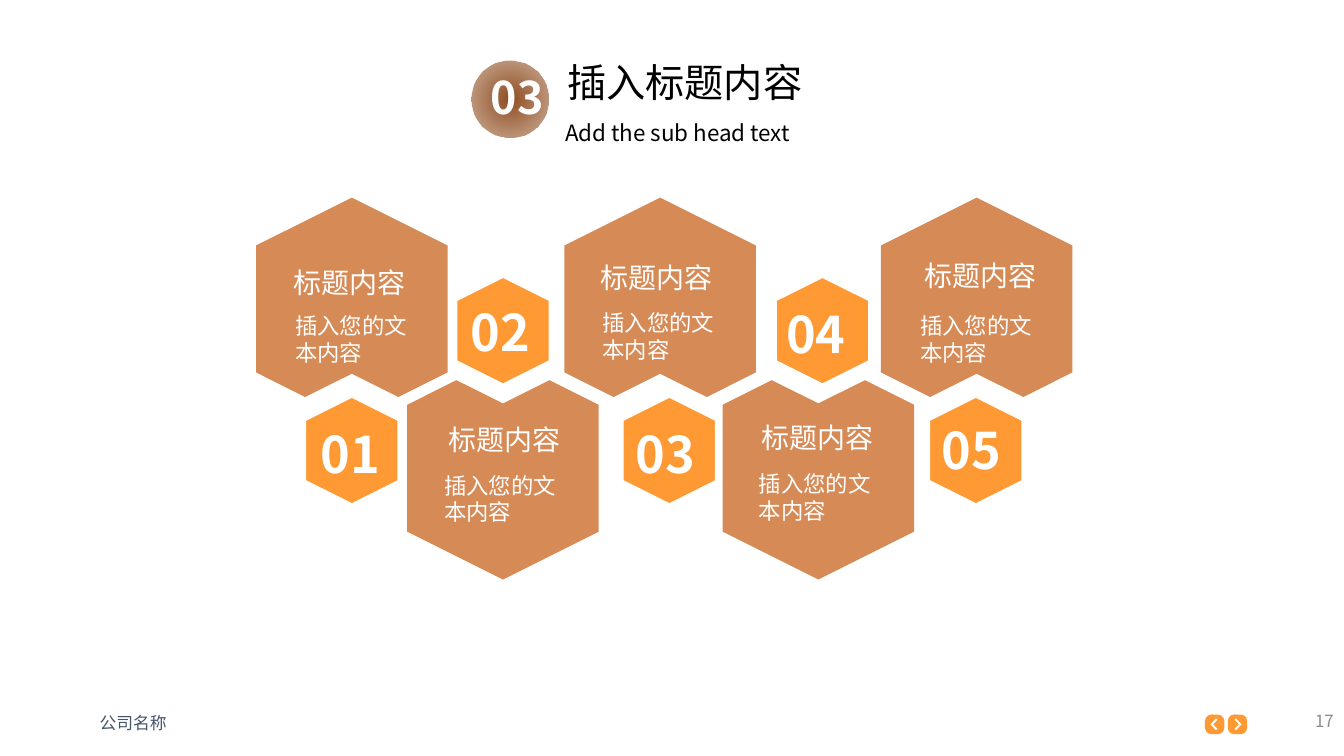
from lxml import etree
from pptx import Presentation
from pptx import util as u
from pptx.dml.color import RGBColor
from pptx.enum import shapes, text
from pptx.oxml import parse_xml
from pptx.oxml.ns import nsdecls, qn

Pt = u.Pt
COLORS = {
    "tile": "C55A11", "badge": "FF9933", "medal": "843C0B", "white": "FFFFFF",
    "black": "000000", "footer": "44546A", "number": "8C8C8C",
}
CJK = "Noto Sans CJK SC"

# Outlines in points, relative to the tile's apex and to the button's centre
TILE = [(0, 0), (68.4, 34.2), (68.4, 124.8), (33.3, 142.4), (0, 125.8),
        (-33.3, 142.4), (-68.4, 124.8), (-68.4, 34.2)]
CHEVRON = [(-2.9, 0), (1, -4.2), (2, -3.2), (-1.2, 0), (2, 3.2), (1, 4.2)]


class Deck:
    def __init__(self, prs):
        self.s = prs.slides.add_slide(prs.slide_layouts[6])

    def paint(self, sp, color, line=None, alpha=None):
        sp.shadow.inherit = False
        sp.fill.solid()
        sp.fill.fore_color.rgb = RGBColor.from_string(COLORS[color])
        if alpha:
            clr = sp.fill._xPr.find(".//" + qn("a:srgbClr"))
            etree.SubElement(clr, qn("a:alpha"), val=str(alpha * 1000))
        if line:
            sp.line.color.rgb = RGBColor.from_string(COLORS[line])
            sp.line.width = Pt(1)
        else:
            sp.line.fill.background()
        return sp

    def preset(self, kind, cx, cy, w, h, color, line=None):
        """Add a preset shape centred on (cx, cy)."""
        sp = self.s.shapes.add_shape(
            kind, Pt(cx - w / 2), Pt(cy - h / 2), Pt(w), Pt(h))
        return self.paint(sp, color, line)

    def outline(self, points, x, y, color, flip_x=1, flip_y=1, alpha=None):
        """Add a closed polygon whose origin is (x, y), mirrored by a flip of -1."""
        pts = [(Pt(x + flip_x * dx), Pt(y + flip_y * dy)) for dx, dy in points]
        builder = self.s.shapes.build_freeform(*pts[0], scale=1.0)
        builder.add_line_segments(pts[1:], close=True)
        return self.paint(builder.convert_to_shape(), color, alpha=alpha)

    def medal(self, cx, cy, size):
        """Add a circle that fades from its centre to its rim."""
        sp = self.preset(shapes.MSO_SHAPE.OVAL, cx, cy, size, size, "medal")
        stops = "".join(
            f'<a:gs pos="{pos}"><a:srgbClr val="{COLORS["medal"]}">'
            f'<a:alpha val="{alpha}"/></a:srgbClr></a:gs>'
            for pos, alpha in ((0, 91000), (100000, 39000)))
        grad = parse_xml(
            f'<a:gradFill {nsdecls("a")}><a:gsLst>{stops}</a:gsLst>'
            '<a:path path="circle"><a:fillToRect l="50000" t="50000" '
            'r="50000" b="50000"/></a:path></a:gradFill>')
        solid = sp._element.spPr.find(qn("a:solidFill"))
        solid.getparent().replace(solid, grad)

    def text(self, words, box, size, color="white", wrap=False, align="LEFT",
             anchor="TOP", **fmt):
        tf = self.s.shapes.add_textbox(*map(Pt, box)).text_frame
        frame = {"word_wrap": wrap,
                 "auto_size": text.MSO_AUTO_SIZE.SHAPE_TO_FIT_TEXT,
                 "vertical_anchor": text.MSO_ANCHOR[anchor]}
        for name, value in frame.items():
            setattr(tf, name, value)
        p = tf.paragraphs[0]
        p.alignment = text.PP_ALIGN[align]
        r = p.add_run()
        r.text = words
        for name, value in {"name": CJK, "size": Pt(size), **fmt}.items():
            setattr(r.font, name, value)
        r.font.color.rgb = RGBColor.from_string(COLORS[color])
        etree.SubElement(r.font._element, qn("a:ea"), typeface=CJK)


def main():
    prs = Presentation()
    prs.slide_width, prs.slide_height = Pt(960), Pt(540)
    deck = Deck(prs)

    deck.medal(364.3, 70.9, 55)
    deck.text("插入标题内容", (398.2, 38.2, 184.3, 41), 28, "black")
    deck.text("03", (343.4, 46.1, 66.2, 46.1), 32, wrap=True, bold=True)
    deck.text("Add the sub head text", (396.7, 81.4, 186.5, 26.6), 16, "black")

    for cx, flip in ((867.6, 1), (883.9, -1)):
        button = deck.preset(shapes.MSO_SHAPE.ROUNDED_RECTANGLE,
                             cx, 517.4, 13.8, 14, "badge")
        button.adjustments[0] = 0.33
        deck.outline(CHEVRON, cx, 517.4, "white", flip_x=flip)

    # Tile x, badge x, then left and top of number, heading and body, body width
    items = [
        (251.3, 251.3, (221.8, 298.8), (202.3, 185.8), (203.8, 219.6), 99.4),
        (359.3, 359.3, (329, 211.7), (313.2, 298.1), (310.3, 333.4), 101.5),
        (471.6, 478.1, (447.1, 298.8), (421.9, 182.9), (423.4, 217.4), 105.1),
        (584.6, 587.5, (554.4, 213.1), (537.1, 296.6), (535, 332.6), 97.2),
        (697.7, 697, (665.3, 295.9), (653, 181.4), (650.2, 219.6), 97.9),
    ]
    for i, (tile_x, badge_x, number, heading, body, body_w) in enumerate(items):
        lower = i % 2
        deck.outline(TILE, tile_x, 414 if lower else 141.2, "tile",
                     flip_y=-1 if lower else 1, alpha=70)
        badge = deck.preset(shapes.MSO_SHAPE.HEXAGON, badge_x,
                            236.2 if lower else 321.8, 76.3, 66.2,
                            "badge", line="white")
        badge.rotation = 90
        deck.text(f"{i + 1:02}", (*number, 59, 50.4), 36, bold=True)
        deck.text("标题内容", (*heading, 94.3, 31), 20, align="CENTER")
        deck.text("插入您的文本内容", (*body, body_w, 45.4), 16, wrap=True)

    deck.text("公司名称", (64.1, 505.4, 144, 21.6), 12, "footer", wrap=True,
              name="Lato")
    deck.text("17", (743.8, 504, 216, 21.6), 12, "number", wrap=True,
              align="RIGHT", anchor="MIDDLE")
    prs.save("out.pptx")


if __name__ == "__main__":
    main()
